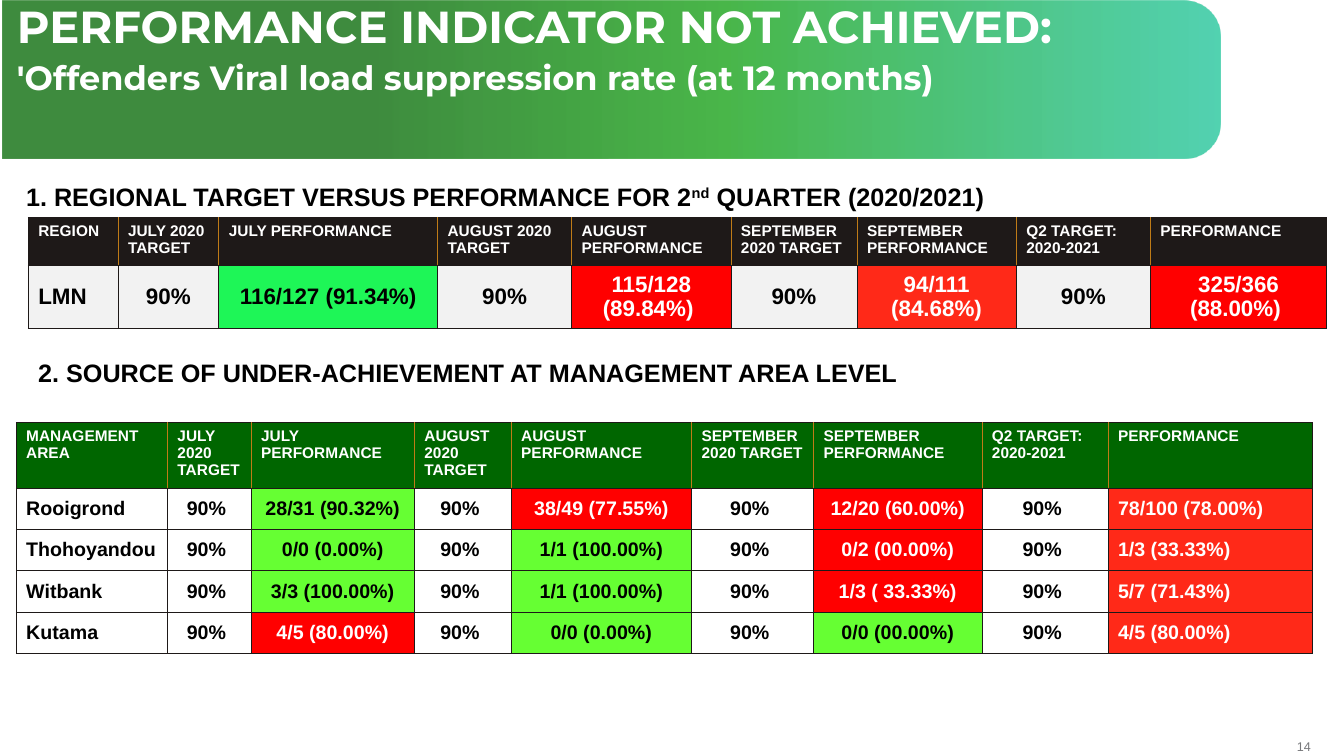
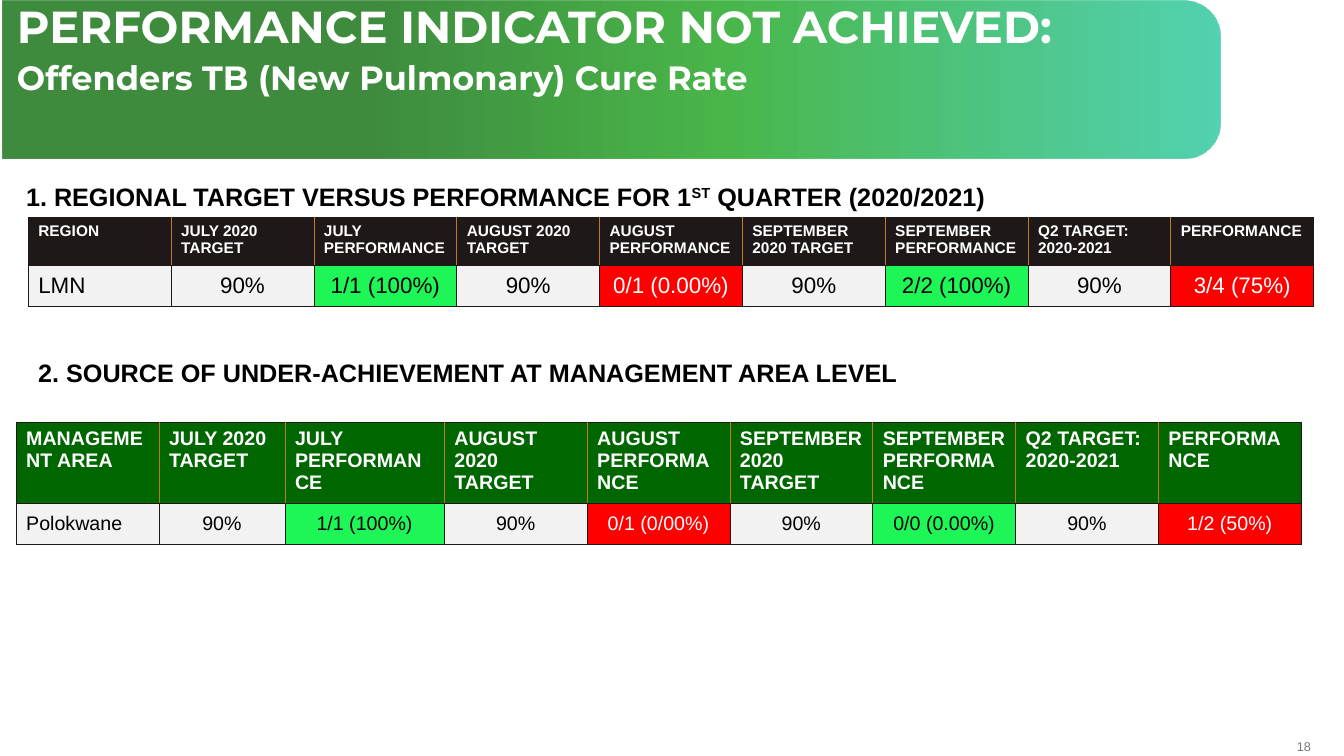
"""Build two slides on performance indicators that were not achieved."""
from copy import deepcopy

from lxml.etree import SubElement
from pptx import Presentation
from pptx.dml.color import RGBColor
from pptx.enum.shapes import MSO_SHAPE
from pptx.enum.text import MSO_ANCHOR, PP_ALIGN
from pptx.oxml.ns import qn
from pptx.util import Inches, Pt

COLOURS = {
    "white": "FFFFFF", "black": "000000", "ink": "1E1918", "forest": "006600",
    "leaf": "009900", "teal": "00BC8D", "amber": "BF7B17", "grey": "77787B",
    "pale": "F2F2F2", "green": "1EF657", "lime": "66FF33",
    "red": "FF0000", "scarlet": "FF2918",
}
BAND_STOPS = [(30, "forest", 75), (59, "leaf", 71), (100, "teal", 67)]
HEADERS = [
    "JULY 2020\nTARGET", "JULY PERFORMANCE",
    "AUGUST 2020\nTARGET", "AUGUST PERFORMANCE",
    "SEPTEMBER 2020 TARGET", "SEPTEMBER PERFORMANCE",
    "Q2 TARGET: 2020-2021", "PERFORMANCE",
]
SLIDES = [
    {
        "number": "14",
        "indicator": "'Offenders Viral load suppression rate (at 12 months)",
        "quarter": ("2", "nd"),
        "tables": [
            {
                "first": "REGION", "left": 0.28, "top": 2.16, "header": "ink",
                "widths": [0.89, 1, 2.17, 1.33, 1.58, 1.25, 1.58, 1.33, 1.75],
                "sizes": (11, 16), "bold": True, "plain": "pale",
                "target": "90%", "last": PP_ALIGN.CENTER,
                "rows": [
                    ("LMN", ("116/127 (91.34%)", "green"), ("115/128 (89.84%) ", "red"),
                     ("94/111 (84.68%)", "scarlet"), ("325/366 (88.00%) ", "red")),
                ],
            },
            {
                "first": "MANAGEMENT AREA", "left": 0.16, "top": 4.19, "header": "forest",
                "widths": [1.5, 0.83, 1.62, 0.96, 1.79, 1.21, 1.67, 1.25, 2.03],
                "sizes": (11, 14), "bold": True, "plain": "white",
                "target": "90% ", "last": PP_ALIGN.LEFT,
                "rows": [
                    ("Rooigrond", ("28/31 (90.32%)", "lime"), ("38/49 (77.55%)", "red"),
                     ("12/20 (60.00%)", "red"), ("78/100 (78.00%)", "scarlet")),
                    ("Thohoyandou", ("0/0 (0.00%)", "lime"), ("1/1 (100.00%)", "lime"),
                     ("0/2 (00.00%)", "red"), ("1/3 (33.33%)", "scarlet")),
                    ("Witbank", ("3/3 (100.00%)", "lime"), ("1/1 (100.00%)", "lime"),
                     ("1/3 ( 33.33%)", "red"), ("5/7 (71.43%)", "scarlet")),
                    ("Kutama", ("4/5 (80.00%)", "red"), ("0/0 (0.00%)", "lime"),
                     ("0/0 (00.00%)", "lime"), ("4/5 (80.00%)", "scarlet")),
                ],
            },
        ],
    },
    {
        "number": "18",
        "indicator": "Offenders TB (New Pulmonary) Cure Rate",
        "quarter": ("1", "ST"),
        "tables": [
            {
                "first": "REGION", "left": 0.28, "top": 2.16, "header": "ink",
                "widths": [12.75 / 9] * 9,
                "sizes": (11, 16), "bold": False, "plain": "pale",
                "target": "90%", "last": PP_ALIGN.CENTER,
                "rows": [
                    ("LMN", ("1/1 (100%)", "green"), ("0/1 (0.00%)", "red"),
                     ("2/2 (100%)", "green"), ("3/4 (75%)", "red")),
                ],
            },
            {
                "first": "MANAGEMENT AREA", "left": 0.16, "top": 4.19, "header": "forest",
                "widths": [12.75 / 9, 1.25, 1.58] + [12.75 / 9] * 6,
                "sizes": (14, 14), "bold": False, "plain": "pale",
                "target": "90%", "last": PP_ALIGN.CENTER,
                "rows": [
                    ("Polokwane", ("1/1 (100%)", "green"), ("0/1 (0/00%)", "red"),
                     ("0/0 (0.00%)", "green"), ("1/2 (50%)", "red")),
                ],
            },
        ],
    },
]


def add_span(para, text, size, colour, bold=True, font="Arial"):
    """Add text to a paragraph, with line breaks of the same size."""
    for index, line in enumerate(text.split("\n")):
        if index:
            para.add_line_break()
            para._p[-1].append(deepcopy(span._r.get_or_add_rPr()))
        span = para.add_run()
        span.text = line
        span.font.name = font
        span.font.size = Pt(size)
        span.font.bold = bold
        span.font.color.rgb = RGBColor.from_string(COLOURS[colour])
    return span


def add_box(page, left, top, width, height):
    """Add a wrapping text box and return its text frame."""
    frame = page.shapes.add_textbox(
        Inches(left), Inches(top), Inches(width), Inches(height)).text_frame
    frame.word_wrap = True
    return frame


deck = Presentation()
deck.slide_width, deck.slide_height = Inches(13.33), Inches(7.5)

for content in SLIDES:
    page = deck.slides.add_slide(deck.slide_layouts[6])

    frame = add_box(page, 12.61, 7.33, 0.39, 0.15)
    frame.margin_left = frame.margin_right = frame.margin_top = frame.margin_bottom = 0
    frame.vertical_anchor = MSO_ANCHOR.MIDDLE
    frame.paragraphs[0].alignment = PP_ALIGN.RIGHT
    add_span(frame.paragraphs[0], content["number"], 9, "grey", False)

    band = page.shapes.add_shape(
        MSO_SHAPE.ROUND_2_SAME_RECTANGLE,
        Inches(5.28), Inches(-5.25), Inches(1.57), Inches(12.08))
    band.rotation = 90
    band.adjustments[0], band.adjustments[1] = 0.233, 0
    band.shadow.inherit = False
    band.line.fill.background()
    band.fill.gradient()
    band.fill.gradient_angle = 90
    stops = band._element.spPr.find(qn("a:gradFill")).find(qn("a:gsLst"))
    stops.clear()
    for position, colour, opacity in BAND_STOPS:
        stop = SubElement(stops, qn("a:gs"), pos=str(position * 1000))
        tint = SubElement(stop, qn("a:srgbClr"), val=COLOURS[colour])
        SubElement(tint, qn("a:alpha"), val=str(opacity * 1000))

    frame = add_box(page, 0.07, 0, 11.98, 0.57)
    title, subtitle = frame.paragraphs[0], frame.add_paragraph()
    for para, text, size in [(title, "PERFORMANCE INDICATOR NOT ACHIEVED:", 32),
                             (subtitle, content["indicator"], 24)]:
        para.line_spacing = 0.9
        para.space_after = Pt(6)
        add_span(para, text, size, "white", font="Montserrat")

    quarter, ordinal = content["quarter"]
    para = add_box(page, 0.16, 1.75, 9.76, 0.4).paragraphs[0]
    add_span(para, "1. REGIONAL TARGET VERSUS PERFORMANCE FOR " + quarter, 18, "black")
    raised = add_span(para, ordinal, 18, "black")
    raised._r.get_or_add_rPr().set("baseline", "30000")
    add_span(para, " QUARTER (2020/2021)", 18, "black")

    para = add_box(page, 0.28, 3.5, 9.65, 0.4).paragraphs[0]
    add_span(para, "2. SOURCE OF UNDER-ACHIEVEMENT AT MANAGEMENT AREA LEVEL", 18, "black")

    for data in content["tables"]:
        grid = [[(text, data["header"]) for text in [data["first"]] + HEADERS]]
        for name, *results in data["rows"]:
            line = [(name, data["plain"])]
            for result in results:
                line += [(data["target"], data["plain"]), result]
            grid.append(line)
        last = len(HEADERS)
        table = page.shapes.add_table(
            len(grid), last + 1, Inches(data["left"]), Inches(data["top"]),
            Inches(sum(data["widths"])), Inches(0.41 * len(grid))).table
        table.first_row = table.horz_banding = False
        for column, width in zip(table.columns, data["widths"]):
            column.width = Inches(width)
        for row, line in enumerate(grid):
            table.rows[row].height = Inches(0.41)
            for column, (text, fill) in enumerate(line):
                cell = table.cell(row, column)
                inner = {"L": row == 0 and column > 0, "R": row == 0 and column < last}
                for side in "LRTB":
                    edge = SubElement(cell._tc.get_or_add_tcPr(), qn("a:ln" + side), w="6350")
                    paint = SubElement(edge, qn("a:solidFill"))
                    colour = "amber" if inner.get(side) else "ink"
                    SubElement(paint, qn("a:srgbClr"), val=COLOURS[colour])
                cell.fill.solid()
                cell.fill.fore_color.rgb = RGBColor.from_string(COLOURS[fill])
                para = cell.text_frame.paragraphs[0]
                if row:
                    cell.vertical_anchor = MSO_ANCHOR.MIDDLE
                    if column:
                        para.alignment = data["last"] if column == last else PP_ALIGN.CENTER
                colour = "white" if row == 0 or fill in ("red", "scarlet") else "black"
                add_span(para, text, data["sizes"][min(row, 1)], colour,
                         row == 0 or data["bold"])

deck.save("out.pptx")
